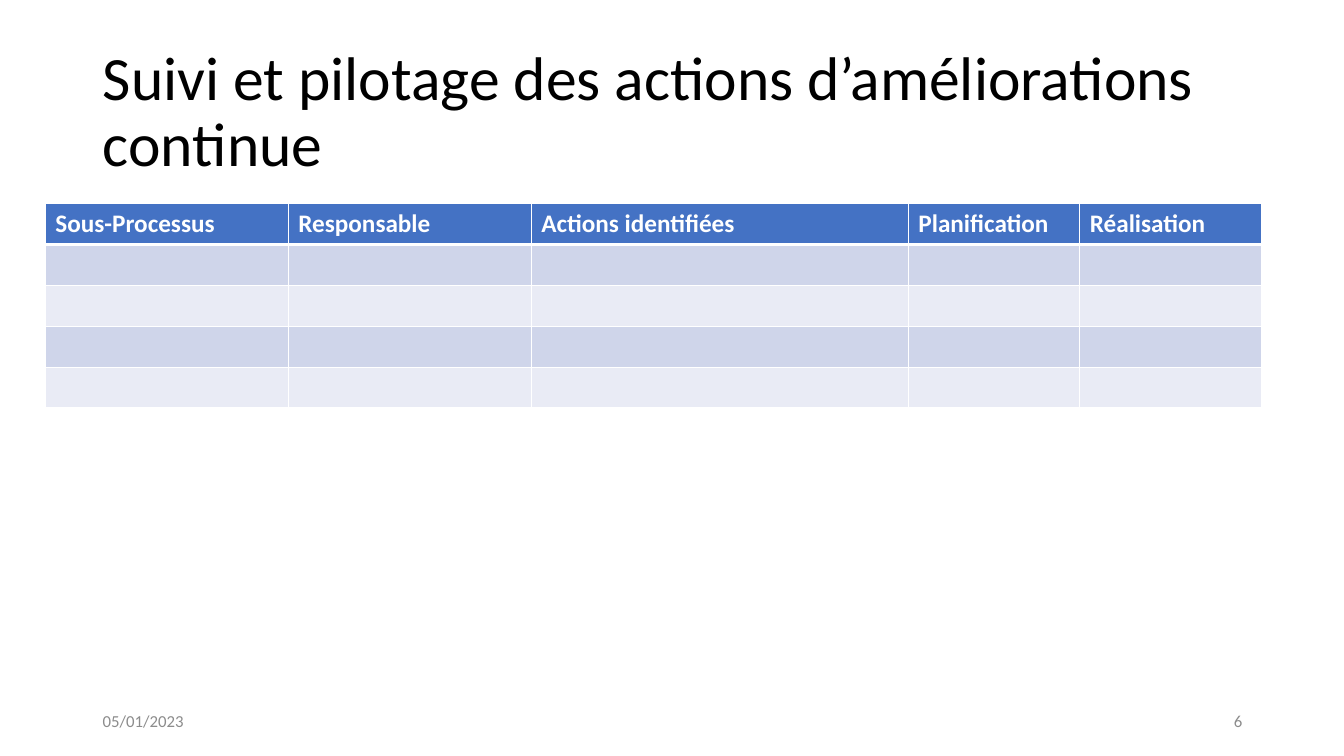
from lxml import etree
from pptx import Presentation
from pptx.dml.color import RGBColor
from pptx.enum.text import MSO_ANCHOR, MSO_AUTO_SIZE, PP_ALIGN
from pptx.oxml.ns import qn
from pptx.util import Inches, Pt

MIDDLE = MSO_ANCHOR.MIDDLE
NO_AUTOFIT = MSO_AUTO_SIZE.NONE
LEFT = PP_ALIGN.LEFT
RIGHT = PP_ALIGN.RIGHT

FONT = "Calibri"
BLACK, WHITE, GREY = "000000", "FFFFFF", "8C8C8C"
HEADER_BLUE = "4472C4"
BANDS = ["CFD5EA", "E9EBF5"]

COLUMNS = [
    ("Sous-Processus", 2.41),
    ("Responsable", 2.41),
    ("Actions identifiées", 3.74),
    ("Planification", 1.7),
    ("Réalisation", 1.8),
]
ACTION_ROWS = 4


def rgb(value):
    return RGBColor.from_string(value)


def add_run(paragraph, wording, size, color, bold=False):
    run = paragraph.add_run()
    run.text = wording
    run.font.name = FONT
    run.font.size = Pt(size)
    run.font.bold = bold
    run.font.color.rgb = rgb(color)


def place_title(slide, left, top, width, height, wording):
    title = slide.shapes.title
    title.left, title.top = Inches(left), Inches(top)
    title.width, title.height = Inches(width), Inches(height)
    frame = title.text_frame
    frame.word_wrap = True
    frame.auto_size = NO_AUTOFIT
    frame.vertical_anchor = MIDDLE
    heading = frame.paragraphs[0]
    heading.alignment = LEFT
    heading.line_spacing = 0.9
    add_run(heading, wording, 44, BLACK)


def add_footer(slide, left, top, width, height, wording, alignment):
    footer = slide.shapes.add_textbox(
        Inches(left), Inches(top), Inches(width), Inches(height)
    )
    frame = footer.text_frame
    frame.word_wrap = True
    frame.vertical_anchor = MIDDLE
    frame.paragraphs[0].alignment = alignment
    add_run(frame.paragraphs[0], wording, 12, GREY)


def set_borders(cell, top, bottom):
    properties = cell._tc.get_or_add_tcPr()
    sides = [("lnL", 1), ("lnR", 1), ("lnT", top), ("lnB", bottom)]
    for position, (side, width) in enumerate(sides):
        border = etree.Element(qn(f"a:{side}"), w=str(Pt(width)))
        fill = etree.SubElement(border, qn("a:solidFill"))
        etree.SubElement(fill, qn("a:srgbClr"), val=WHITE)
        properties.insert(position, border)


def add_action_table(slide, left, top, width, height):
    row_count = ACTION_ROWS + 1
    table = slide.shapes.add_table(
        row_count, len(COLUMNS),
        Inches(left), Inches(top), Inches(width), Inches(height),
    ).table
    for column, (heading, column_width) in zip(table.columns, COLUMNS):
        column.width = Inches(column_width)
    for index, row in enumerate(table.rows):
        row.height = Inches(height / row_count)
        for cell, (heading, column_width) in zip(row.cells, COLUMNS):
            cell.fill.solid()
            if index == 0:
                cell.fill.fore_color.rgb = rgb(HEADER_BLUE)
                add_run(cell.text_frame.paragraphs[0], heading, 18, WHITE, True)
            else:
                cell.fill.fore_color.rgb = rgb(BANDS[(index - 1) % len(BANDS)])
            set_borders(cell, 3 if index == 1 else 1, 3 if index == 0 else 1)


def build_follow_up_slide(presentation):
    slide = presentation.slides.add_slide(presentation.slide_layouts[5])
    place_title(
        slide, 0.92, 0.4, 11.5, 1.45,
        "Suivi et pilotage des actions d’améliorations continue",
    )
    add_action_table(slide, 0.45, 2.02, 12.06, 2.02)
    add_footer(slide, 0.92, 6.95, 3, 0.4, "05/01/2023", LEFT)
    add_footer(slide, 9.42, 6.95, 3, 0.4, "6", RIGHT)


def main():
    presentation = Presentation()
    presentation.slide_width = Inches(13.33)
    presentation.slide_height = Inches(7.5)
    build_follow_up_slide(presentation)
    presentation.save("out.pptx")


if __name__ == "__main__":
    main()
